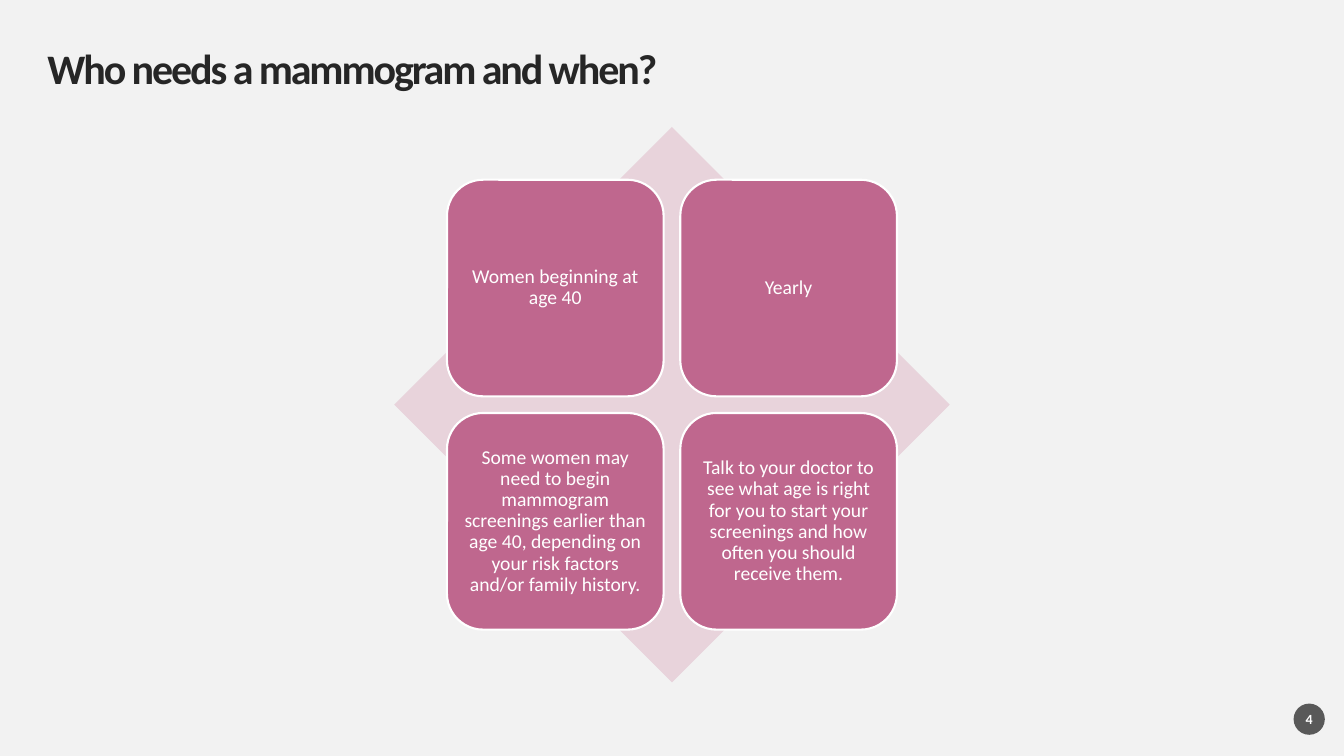
from pptx import Presentation
from pptx.dml.color import RGBColor
from pptx.enum.shapes import MSO_SHAPE
from pptx.enum.text import MSO_ANCHOR, PP_ALIGN
from pptx.util import Inches, Pt

BACKGROUND = RGBColor(0xF2, 0xF2, 0xF2)
INK = RGBColor(0x26, 0x26, 0x26)
GRAY = RGBColor(0x59, 0x59, 0x59)
PALE_PINK = RGBColor(0xE8, 0xD3, 0xDB)
ROSE = RGBColor(0xBF, 0x67, 0x8E)
WHITE = RGBColor(0xFF, 0xFF, 0xFF)
FONT = "Calibri"

ANSWERS = [
    "Women beginning at age 40",
    "Yearly",
    "Some women may need to begin mammogram screenings earlier than age 40, "
    "depending on your risk factors and/or family history.",
    "Talk to your doctor to see what age is right for you to start your "
    "screenings and how often you should receive them.",
]


def add_filled(slide, kind, left, top, size, fill, line=None):
    """Add a square preset shape with a flat fill and an optional outline."""
    sp = slide.shapes.add_shape(
        kind, Inches(left), Inches(top), Inches(size), Inches(size))
    sp.shadow.inherit = False
    sp.fill.solid()
    sp.fill.fore_color.rgb = fill
    if line is None:
        sp.line.fill.background()
    else:
        sp.line.color.rgb = line
        sp.line.width = Pt(1.5)
    return sp


def write(sp, text, size, color, align, bold=False, inset=0, spacing=0.9):
    """Write one vertically centred paragraph and return its run."""
    tf = sp.text_frame
    tf.word_wrap = True
    tf.vertical_anchor = MSO_ANCHOR.MIDDLE
    tf.margin_left = tf.margin_right = Inches(inset)
    tf.margin_top = tf.margin_bottom = Inches(inset)
    p = tf.paragraphs[0]
    p.alignment = align
    p.line_spacing = spacing
    r = p.add_run()
    r.text = text
    r.font.name = FONT
    r.font.size = Pt(size)
    r.font.bold = bold
    r.font.color.rgb = color
    return r


def add_title(slide, left, top, width, height):
    """Add the tightly tracked slide title."""
    sp = slide.shapes.add_textbox(
        Inches(left), Inches(top), Inches(width), Inches(height))
    r = write(sp, "Who needs a mammogram and when?", 30, INK,
              PP_ALIGN.LEFT, bold=True)
    r.font._element.set("spc", "-150")


def add_page_badge(slide, left, top, size):
    """Add the round page number."""
    sp = add_filled(slide, MSO_SHAPE.OVAL, left, top, size, GRAY)
    write(sp, "4", 10, WHITE, PP_ALIGN.CENTER, bold=True, spacing=1.0)


def add_matrix(slide, left, top, size):
    """Add the diamond with a two by two grid of answers centred on it."""
    add_filled(slide, MSO_SHAPE.DIAMOND, left, top, size, PALE_PINK)
    tile, pitch = 0.39 * size, 0.42 * size
    margin = (size - pitch - tile) / 2
    for i, answer in enumerate(ANSWERS):
        row, col = divmod(i, 2)
        sp = add_filled(slide, MSO_SHAPE.ROUNDED_RECTANGLE,
                        left + margin + col * pitch,
                        top + margin + row * pitch, tile, ROSE, WHITE)
        write(sp, answer, 14, WHITE, PP_ALIGN.CENTER, inset=0.06)


def main():
    """Build the slide and save it."""
    prs = Presentation()
    prs.slide_width, prs.slide_height = Inches(13.33), Inches(7.5)
    slide = prs.slides.add_slide(prs.slide_layouts[6])
    slide.background.fill.solid()
    slide.background.fill.fore_color.rgb = BACKGROUND
    add_title(slide, 0.47, 0.47, 12.39, 0.47)
    add_page_badge(slide, 12.83, 6.98, 0.31)
    add_matrix(slide, 3.91, 1.26, 5.51)
    prs.save("out.pptx")


if __name__ == "__main__":
    main()
